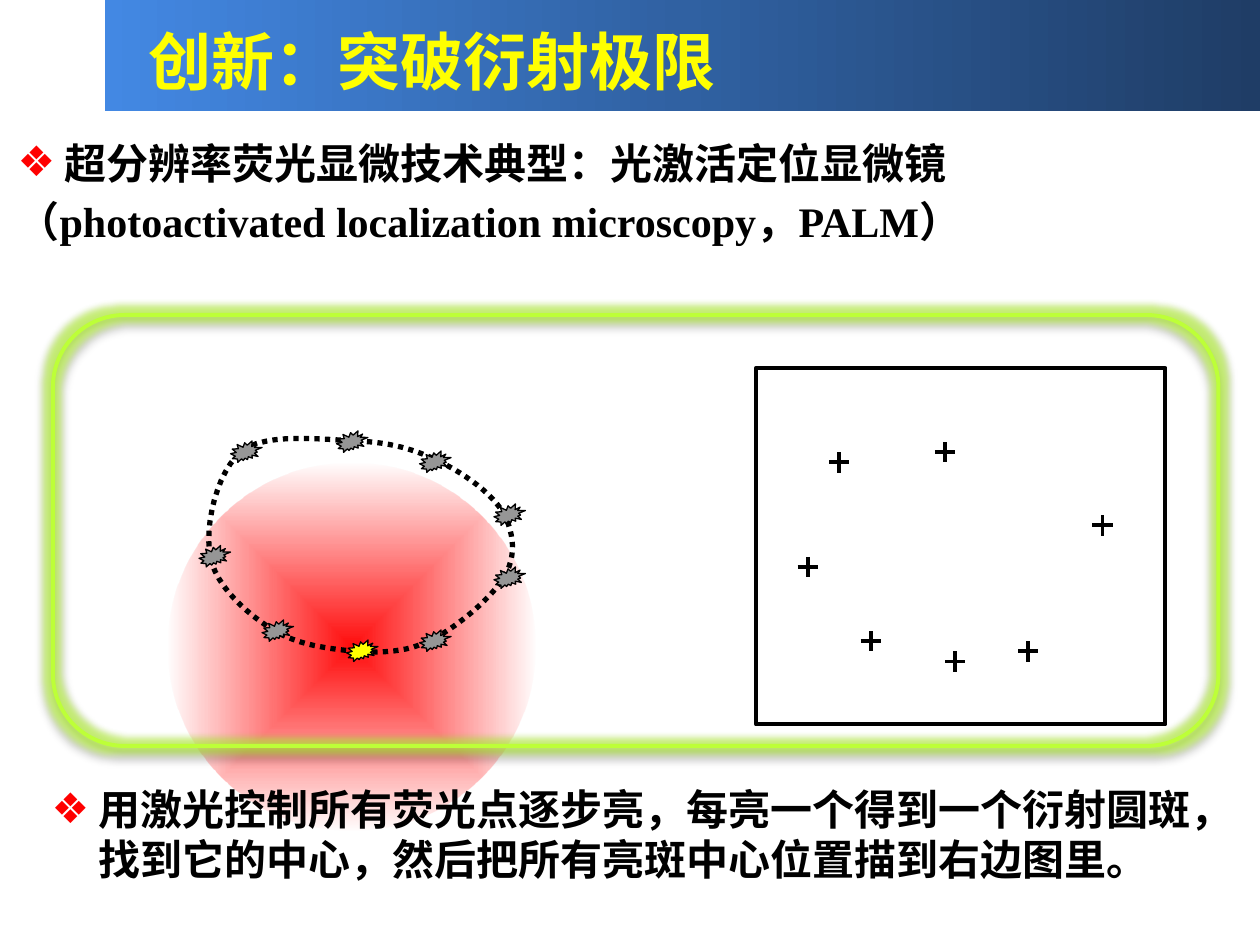
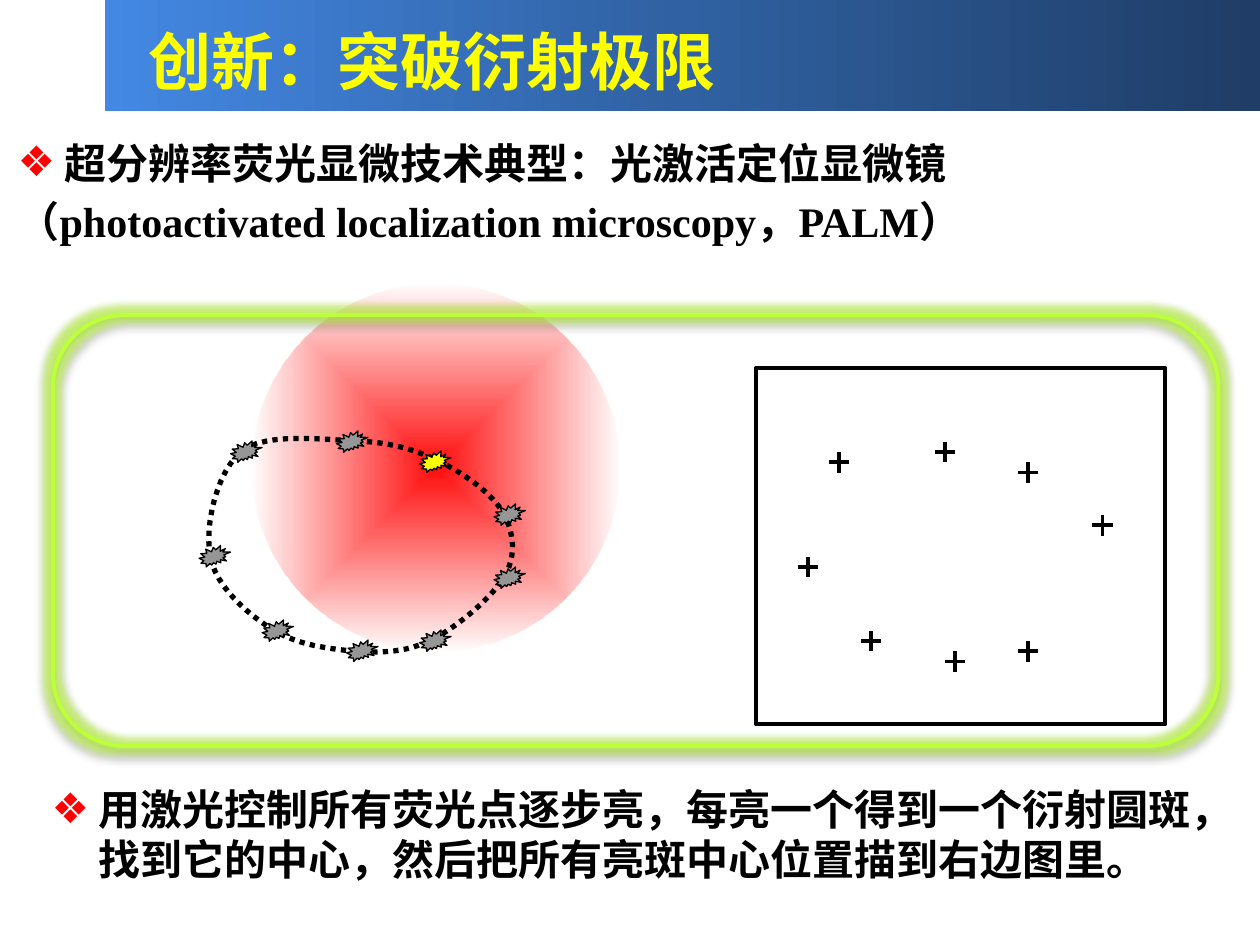
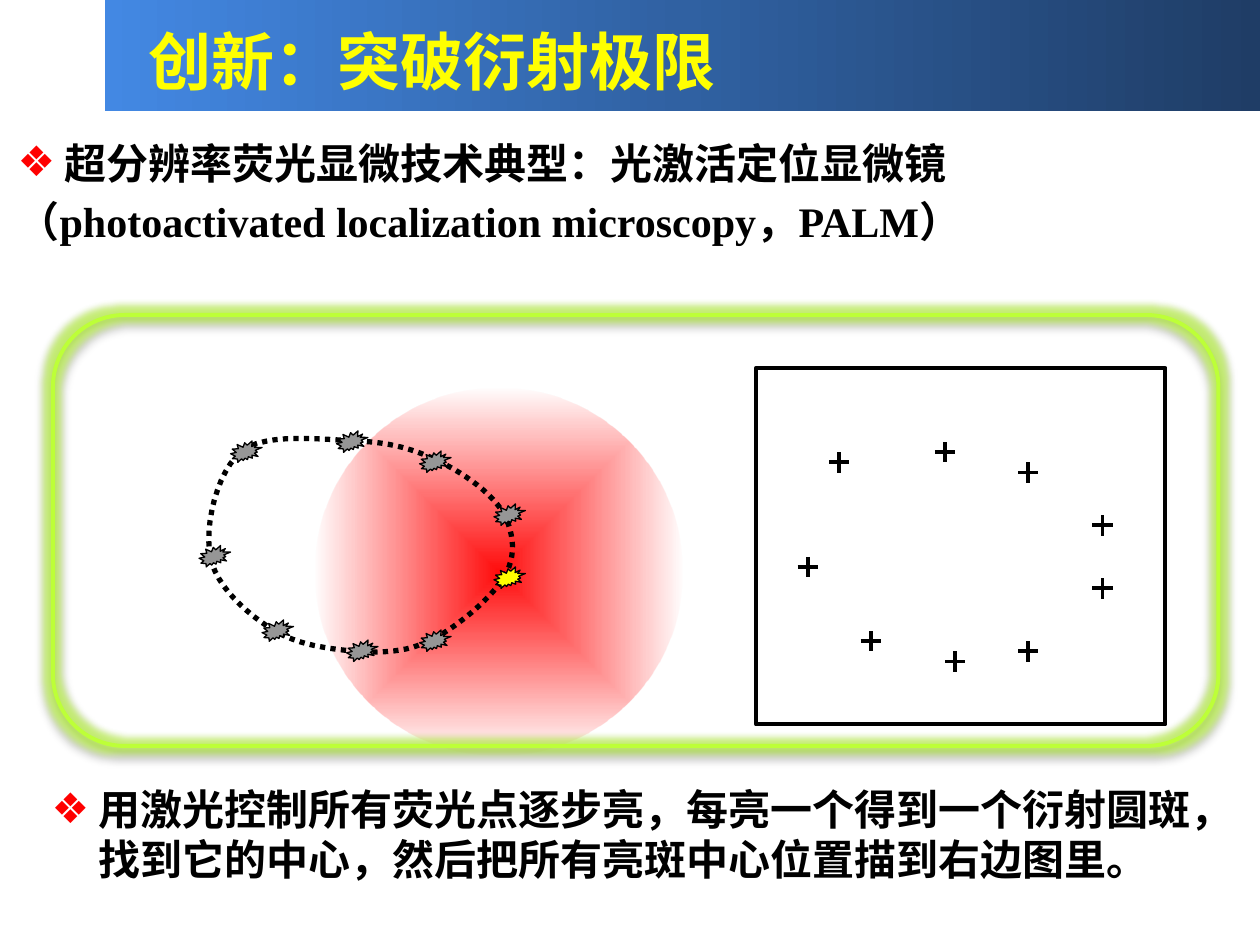
"""Three slides that show how PALM locates one glowing point at a time."""
from pptx import Presentation, util as u
from pptx.dml.color import RGBColor
from pptx.enum import dml, shapes, text
from pptx.oxml import parse_xml
from pptx.oxml.ns import nsdecls

HUE = {"ink": "000000", "title": "FFFF00", "mark": "FF0000", "off": "969696",
       "lit": "FFFF00", "halo": "FF0D0D", "frame": "BDFF38",
       "left": "4388E3", "mid": "3061A2", "right": "1F3D66"}
SANS, SERIF = "Noto Sans CJK SC", "Times New Roman"
NS = nsdecls("a")
BAND = f"""<a:gradFill {NS} rotWithShape="1"><a:gsLst>
<a:gs pos="0"><a:srgbClr val="{HUE['left']}"/></a:gs>
<a:gs pos="50000"><a:srgbClr val="{HUE['mid']}"/></a:gs>
<a:gs pos="100000"><a:srgbClr val="{HUE['right']}"/></a:gs>
</a:gsLst><a:lin ang="0" scaled="0"/></a:gradFill>"""
HALO = f"""<a:gradFill {NS} rotWithShape="1"><a:gsLst>
<a:gs pos="0"><a:srgbClr val="{HUE['halo']}"/></a:gs>
<a:gs pos="100000"><a:srgbClr val="{HUE['halo']}"><a:alpha val="0"/></a:srgbClr></a:gs>
</a:gsLst><a:path path="shape">
<a:fillToRect l="50000" t="50000" r="50000" b="50000"/></a:path></a:gradFill>"""
GLOW = f"""<a:effectLst {NS}>
<a:glow rad="101600"><a:srgbClr val="{HUE['frame']}"><a:alpha val="60000"/></a:srgbClr></a:glow>
<a:outerShdw blurRad="25400" dist="22860" dir="5400000" rotWithShape="0">
<a:srgbClr val="{HUE['ink']}"><a:alpha val="35000"/></a:srgbClr></a:outerShdw></a:effectLst>"""

SPOTS = [(1.58, 4.33), (1.83, 3.5), (2.67, 3.42), (3.33, 3.58), (3.92, 4),
         (3.92, 4.5), (3.33, 5), (2.75, 5.08), (2.08, 4.92)]
START = (1.67, 4.42)
CURVES = [(1.62, 4.18, 1.72, 3.74, 1.92, 3.58), (2.11, 3.43, 2.57, 3.49, 2.83, 3.5),
          (3.1, 3.51, 3.31, 3.57, 3.5, 3.67), (3.69, 3.76, 3.92, 3.93, 4, 4.08),
          (4.08, 4.24, 4.1, 4.42, 4, 4.58), (3.9, 4.75, 3.61, 4.99, 3.42, 5.08),
          (3.22, 5.18, 3.04, 5.18, 2.83, 5.17), (2.62, 5.15, 2.36, 5.12, 2.17, 5),
          (1.97, 4.88, 1.71, 4.65, 1.67, 4.42)]
STEPS = 12
UNIT = 1000
STAGES = [(7, (1.33, 3.67), {3, 5}), (3, (2, 2.25), {5}), (5, (2.5, 3.08), set())]
TITLE = "创新：突破衍射极限"
TOPIC = "超分辨率荧光显微技术典型：光激活定位显微镜"
TERM = "（photoactivated localization microscopy，PALM）"
NOTE = "用激光控制所有荧光点逐步亮，每亮一个得到一个衍射圆斑，找到它的中心，然后把所有亮斑中心位置描到右边图里。"


def paint(item, fill=None, edge=None, width=0):
    item.shadow.inherit = False
    if fill:
        item.fill.solid()
        item.fill.fore_color.rgb = RGBColor.from_string(HUE[fill])
    else:
        item.fill.background()
    if edge:
        item.line.color.rgb = RGBColor.from_string(HUE[edge])
        item.line.width = u.Pt(width)
    else:
        item.line.fill.background()


def write(par, words, size, hue, face=SANS, mark=False):
    props = par._p.get_or_add_pPr()
    props.set("marL", str(u.Inches(0.375) if mark else 0))
    props.set("indent", str(u.Inches(-0.375) if mark else 0))
    if mark:
        props.append(parse_xml(f'<a:buClr {NS}><a:srgbClr val="{HUE["mark"]}"/></a:buClr>'))
        props.append(parse_xml(f'<a:buChar {NS} char="❖"/>'))
    else:
        props.append(parse_xml(f"<a:buNone {NS}/>"))
    par.alignment = text.PP_ALIGN.LEFT
    par.space_before = u.Pt(0)
    run = par.add_run()
    run.text = words
    run.font.size, run.font.bold, run.font.name = u.Pt(size), True, face
    run.font.color.rgb = RGBColor.from_string(HUE[hue])
    run.font._element.append(parse_xml(f'<a:ea {NS} typeface="{SANS}"/>'))


deck = Presentation()
deck.slide_width, deck.slide_height = u.Inches(10), u.Inches(7.5)
base = deck.slide_layouts[3]
slides = [deck.slides.add_slide(base) for stage in STAGES]

band = slides[0].shapes.add_shape(shapes.MSO_SHAPE.RECTANGLE, u.Inches(0.83), 0,
                                  u.Inches(9.17), u.Inches(0.88))
band.shadow.inherit = False
band.line.fill.background()
band.element.spPr.insert(2, parse_xml(BAND))
base.shapes.element.insert(2, band.element)

ring = []
last = START
for ax, ay, bx, by, x, y in CURVES:
    for step in range(1, STEPS + 1):
        t = step / STEPS
        s = 1 - t
        ring.append(tuple(UNIT * (s**3 * p + 3 * s * s * t * a + 3 * s * t * t * b + t**3 * q)
                          for p, a, b, q in zip(last, (ax, ay), (bx, by), (x, y))))
    last = (x, y)

for slide, (lit, spot, gaps) in zip(slides, STAGES):
    draw = slide.shapes

    for at, (left, top) in enumerate(SPOTS):
        if at in gaps:
            continue
        x, y = left + 4.83, top + 0.17
        cross = draw.add_group_shape()
        for dx, dy in ((0.08, 0), (0, 0.08)):
            bar = cross.shapes.add_connector(
                shapes.MSO_CONNECTOR.STRAIGHT, u.Inches(x - dx), u.Inches(y - dy),
                u.Inches(x + dx), u.Inches(y + dy))
            bar.line.color.rgb = RGBColor.from_string(HUE["ink"])
            bar.line.width = u.Pt(2.25)
            bar.element.spPr.append(parse_xml(f"<a:effectLst {NS}/>"))

    halo = draw.add_shape(shapes.MSO_SHAPE.OVAL, u.Inches(spot[0]), u.Inches(spot[1]),
                          u.Inches(2.92), u.Inches(2.92))
    halo.shadow.inherit = False
    halo.line.fill.background()
    halo.element.spPr.insert(2, parse_xml(HALO))

    pen = draw.build_freeform(*ring[-1], scale=u.Inches(1) / UNIT)
    pen.add_line_segments(ring, close=True)
    loop = pen.convert_to_shape()
    paint(loop, None, "ink", 3)
    loop.line.dash_style = dml.MSO_LINE.ROUND_DOT

    for at, (left, top) in enumerate(SPOTS):
        seal = draw.add_shape(shapes.MSO_SHAPE.EXPLOSION2, u.Inches(left), u.Inches(top),
                              u.Inches(0.25), u.Inches(0.17))
        paint(seal, "lit" if at == lit else "off", "ink", 0.75)

    chart = draw.add_shape(shapes.MSO_SHAPE.RECTANGLE, u.Inches(6), u.Inches(2.92),
                           u.Inches(3.25), u.Inches(2.83))
    paint(chart, None, "ink", 2.25)

    head, topic, note = draw.title, slide.placeholders[1], slide.placeholders[2]
    for box, place in ((note, (0.31, 6.17, 9.58, 1.04)), (head, (1.08, 0.14, 8.75, 0.62)),
                       (topic, (0.04, 1.04, 11.46, 1.04))):
        box.left, box.top, box.width, box.height = map(u.Inches, place)
        box.text_frame.word_wrap = True
        box.text_frame.auto_size = text.MSO_AUTO_SIZE.NONE
        box.text_frame.vertical_anchor = text.MSO_ANCHOR.TOP
        draw.element.append(box.element)
    head.text_frame.vertical_anchor = text.MSO_ANCHOR.MIDDLE
    head.text_frame.margin_top = u.Inches(0.11)

    write(head.text_frame.paragraphs[0], TITLE, 36, "title")
    write(note.text_frame.paragraphs[0], NOTE, 24, "ink", mark=True)
    write(topic.text_frame.paragraphs[0], TOPIC, 24, "ink", mark=True)
    term = topic.text_frame.add_paragraph()
    write(term, TERM, 24, "ink", SERIF)
    term.space_before = u.Pt(4.8)
    for par in (*note.text_frame.paragraphs, *topic.text_frame.paragraphs):
        par.line_spacing = u.Pt(28.6)

    frame = draw.add_shape(shapes.MSO_SHAPE.ROUNDED_RECTANGLE, u.Inches(0.42), u.Inches(2.5),
                           u.Inches(9.25), u.Inches(3.42))
    paint(frame, None, "frame", 2.25)
    props = frame.element.spPr
    props.replace(props[-1], parse_xml(GLOW))

deck.save("out.pptx")
